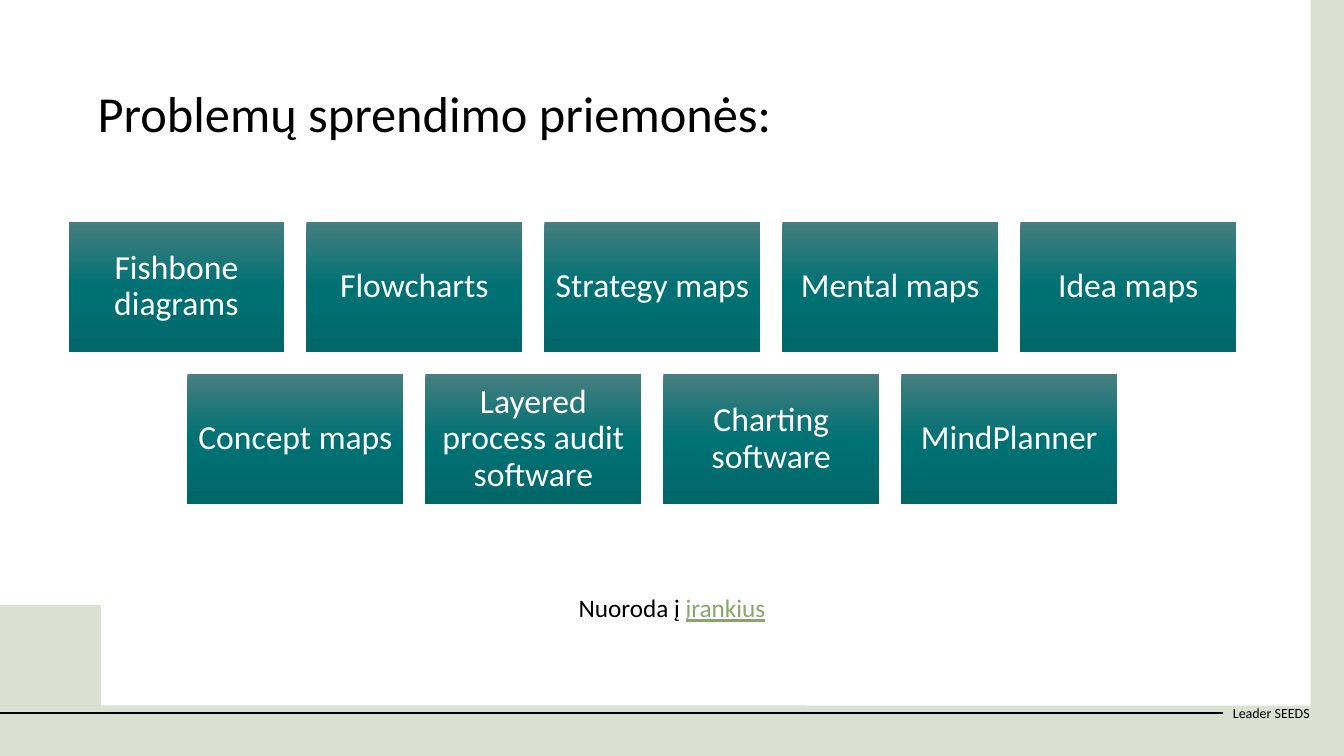
from copy import deepcopy
from lxml.etree import SubElement
from pptx import Presentation
from pptx.dml.color import RGBColor
from pptx.enum.shapes import MSO_CONNECTOR, MSO_SHAPE
from pptx.enum.text import MSO_ANCHOR, PP_ALIGN
from pptx.oxml.ns import qn
from pptx.util import Inches, Pt

COLORS = {
    "background": "DAE0D2",
    "panel": "FFFFFF",
    "bar": "AABC99",
    "text": "000000",
    "tile_text": "FFFFFF",
    "link": "87A66E",
}
TILE_GRADIENT = [(0, "477E7F"), (0.5, "007173"), (1, "006769")]
TILE_ROWS = [
    ["Fishbone diagrams", "Flowcharts", "Strategy maps", "Mental maps", "Idea maps"],
    ["Concept maps", "Layered process audit software", "Charting software", "MindPlanner"],
]
TILE_W, TILE_H, GAP = 2.14, 1.29, 0.22
TILES_CENTER, TILES_TOP = 6.47, 2.2


def rgb(name):
    return RGBColor.from_string(COLORS[name])


def curve(p0, p1, p2, p3, steps=24):
    points = []
    for i in range(steps + 1):
        t = i / steps
        weights = ((1 - t) ** 3, 3 * t * (1 - t) ** 2, 3 * t * t * (1 - t), t ** 3)
        points.append(tuple(
            sum(w * c for w, c in zip(weights, axis))
            for axis in zip(p0, p1, p2, p3)
        ))
    return points


def add_outline(slide, points, color):
    fb = slide.shapes.build_freeform(*points[0], scale=Inches(1))
    fb.add_line_segments(points[1:], close=True)
    sp = fb.convert_to_shape()
    sp.shadow.inherit = False
    sp.fill.solid()
    sp.fill.fore_color.rgb = rgb(color)
    sp.line.fill.background()


def style_run(r, size, color="text"):
    r.font.name = "Calibri"
    r.font.size = Pt(size)
    r.font.color.rgb = rgb(color)


def add_text(slide, box, text, size, anchor=MSO_ANCHOR.TOP, align=PP_ALIGN.LEFT, spacing=1.0):
    sp = slide.shapes.add_textbox(*(Inches(v) for v in box))
    tf = sp.text_frame
    tf.word_wrap = True
    tf.vertical_anchor = anchor
    p = tf.paragraphs[0]
    p.text = text
    p.alignment = align
    p.line_spacing = spacing
    style_run(p.runs[0], size)
    return p


def add_rule(slide, x1, x2, y):
    line = slide.shapes.add_connector(
        MSO_CONNECTOR.STRAIGHT, Inches(x1), Inches(y), Inches(x2), Inches(y))
    line.line.color.rgb = rgb("text")
    line.line.width = Pt(1.5)
    SubElement(line._element.spPr, qn("a:effectLst"))


def fill_gradient(sp, stops):
    sp.fill.gradient()
    sp.fill.gradient_angle = 270
    gs_list = sp._element.spPr.find(qn("a:gradFill")).find(qn("a:gsLst"))
    while len(gs_list) < len(stops):
        gs_list.append(deepcopy(gs_list[0]))
    for stop, (position, color) in zip(sp.fill.gradient_stops, stops):
        stop.position = position
        stop.color.rgb = RGBColor.from_string(color)


def add_tile(slide, x, y, text):
    sp = slide.shapes.add_shape(
        MSO_SHAPE.RECTANGLE, Inches(x), Inches(y), Inches(TILE_W), Inches(TILE_H))
    sp.shadow.inherit = False
    fill_gradient(sp, TILE_GRADIENT)
    sp.line.fill.background()
    tf = sp.text_frame
    tf.word_wrap = True
    tf.vertical_anchor = MSO_ANCHOR.MIDDLE
    tf.margin_left = tf.margin_right = tf.margin_top = tf.margin_bottom = Inches(0.09)
    p = tf.paragraphs[0]
    p.text = text
    p.alignment = PP_ALIGN.CENTER
    p.line_spacing = 0.9
    style_run(p.runs[0], 24, "tile_text")


def add_tiles(slide):
    for row, names in enumerate(TILE_ROWS):
        left = TILES_CENTER - (len(names) * (TILE_W + GAP) - GAP) / 2
        for col, name in enumerate(names):
            add_tile(slide, left + col * (TILE_W + GAP), TILES_TOP + row * (TILE_H + GAP), name)


def add_frame(slide):
    slide.background.fill.solid()
    slide.background.fill.fore_color.rgb = rgb("background")
    panel = [(0.35, 0.37)]
    panel += curve((12.2, 0.37), (12.65, 0.37), (13.01, 0.69), (13.01, 1.08))
    panel += [(13.01, 6.87)]
    panel += curve((2.05, 6.87), (1.11, 6.87), (0.35, 6.2), (0.35, 5.38))
    add_outline(slide, panel, "panel")
    add_text(slide, (12.13, 6.87, 1.01, 0.4), "Leader SEEDS", 10, MSO_ANCHOR.MIDDLE)
    add_rule(slide, 0, 12.13, 7.07)
    bar = [(0, 7.23), (0, 6.51)]
    bar += curve((7.13, 6.51), (7.34, 6.51), (7.51, 6.69), (7.51, 6.9))
    bar += [(7.51, 7.23)]
    add_outline(slide, bar, "bar")


def add_link_line(slide):
    p = add_text(slide, (3.33, 5.77, 6.67, 0.46), "Nuoroda į ", 18,
                 align=PP_ALIGN.CENTER, spacing=1.2)
    r = p.add_run()
    r.text = "įrankius"
    style_run(r, 18, "link")
    r.font.underline = True


def main():
    prs = Presentation()
    prs.slide_width, prs.slide_height = Inches(13.33), Inches(7.5)
    slide = prs.slides.add_slide(prs.slide_layouts[6])
    add_frame(slide)
    add_text(slide, (0.87, 0.83, 11.59, 0.88), "Problemų sprendimo priemonės:", 36, spacing=0.9)
    add_tiles(slide)
    add_link_line(slide)
    prs.save("out.pptx")


if __name__ == "__main__":
    main()
